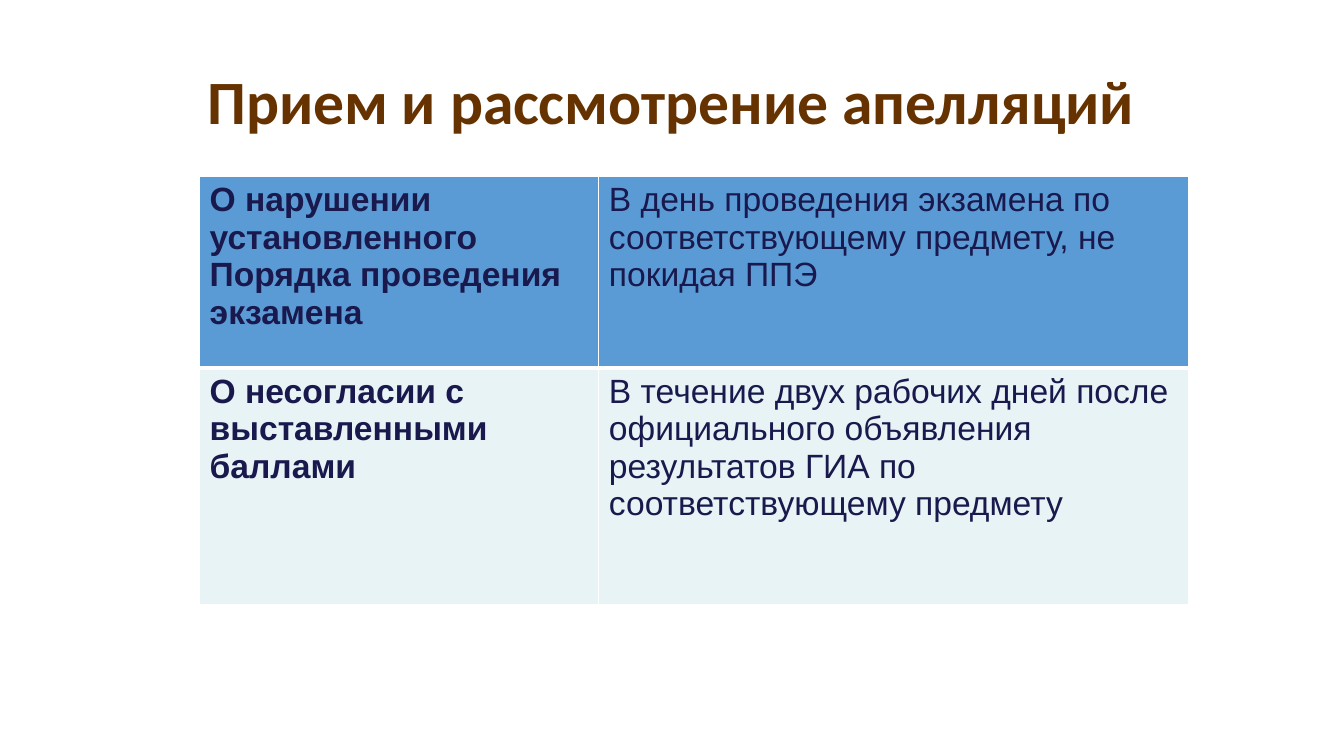
from dataclasses import dataclass

from lxml.etree import SubElement
from pptx import Presentation
from pptx.dml.color import RGBColor
from pptx.enum.text import MSO_ANCHOR, PP_ALIGN
from pptx.oxml.ns import qn
from pptx.util import Inches, Pt

COLORS = {
    "title": "663300",
    "text": "19194D",
    "violation": "5B9BD5",
    "scores": "E7F3F4",
    "border": "FFFFFF",
}
GRID = 0.25  # inches in one grid column or row
COLUMNS = (15.84, 23.4)
TABLE_LEFT, TABLE_TOP = 7.92, 7
TITLE_BOX = (7.84, 1.32, 39.32, 5.68)  # left, top, width, height
THIN, THICK = 1, 3

TITLE_FONT = {"name": "Calibri", "size": Pt(44), "bold": True}
CELL_FONT = {"name": "Arial", "size": Pt(24)}
TITLE_FRAME = {"word_wrap": True, "vertical_anchor": MSO_ANCHOR.MIDDLE}
TITLE_PARAGRAPH = {"alignment": PP_ALIGN.LEFT, "line_spacing": 0.9}
CELL_MARGINS = {
    "margin_left": Inches(0.1),
    "margin_right": Inches(0.1),
    "margin_top": Inches(0.05),
    "margin_bottom": Inches(0.05),
}


@dataclass
class Appeal:
    subject: str
    deadline: str
    height: float
    fill: str
    top_line: int
    bottom_line: int


APPEALS = [
    Appeal("О нарушении установленного Порядка проведения экзамена",
           "В день проведения экзамена по соответствующему предмету, не покидая ППЭ",
           7.6, "violation", THIN, THICK),
    Appeal("О несогласии с выставленными баллами",
           "В течение двух рабочих дней после официального объявления "
           "результатов ГИА по соответствующему предмету",
           9.4, "scores", THICK, THIN),
]


def units(n: float) -> int:
    return Inches(n * GRID)


def apply(target, values: dict) -> None:
    for name, value in values.items():
        setattr(target, name, value)


def write(p, text: str, font: dict, color: str) -> None:
    r = p.add_run()
    r.text = text
    apply(r.font, font)
    r.font.color.rgb = RGBColor.from_string(COLORS[color])


def set_borders(cell, top: int, bottom: int) -> None:
    tc_pr = cell._tc.get_or_add_tcPr()
    widths = {"a:lnL": THIN, "a:lnR": THIN, "a:lnT": top, "a:lnB": bottom}
    for tag, width in widths.items():
        line = SubElement(tc_pr, qn(tag), w=str(Pt(width)))
        fill = SubElement(line, qn("a:solidFill"))
        SubElement(fill, qn("a:srgbClr"), val=COLORS["border"])


def add_title(slide, text: str) -> None:
    sp = slide.shapes.add_textbox(*map(units, TITLE_BOX))
    tf = sp.text_frame
    apply(tf, TITLE_FRAME)
    p = tf.paragraphs[0]
    apply(p, TITLE_PARAGRAPH)
    write(p, text, TITLE_FONT, "title")


def add_appeals(slide, appeals: list[Appeal]) -> None:
    height = sum(a.height for a in appeals)
    frame = slide.shapes.add_table(
        len(appeals), len(COLUMNS), units(TABLE_LEFT), units(TABLE_TOP),
        units(sum(COLUMNS)), units(height))
    table = frame.table
    for column, width in zip(table.columns, COLUMNS):
        column.width = units(width)
    for row, appeal in zip(table.rows, appeals):
        row.height = units(appeal.height)
        for i, text in enumerate((appeal.subject, appeal.deadline)):
            cell = row.cells[i]
            apply(cell, CELL_MARGINS)
            # Borders come before the fill in the cell properties
            set_borders(cell, appeal.top_line, appeal.bottom_line)
            cell.fill.solid()
            cell.fill.fore_color.rgb = RGBColor.from_string(COLORS[appeal.fill])
            write(cell.text_frame.paragraphs[0], text,
                  {**CELL_FONT, "bold": i == 0}, "text")


def main() -> None:
    prs = Presentation()
    prs.slide_width, prs.slide_height = Inches(13.33), Inches(7.5)
    s = prs.slides.add_slide(prs.slide_layouts[6])
    # Heading
    add_title(s, "Прием и рассмотрение апелляций")
    # Kinds of appeal and their deadlines
    add_appeals(s, APPEALS)
    prs.save("out.pptx")


if __name__ == "__main__":
    main()
